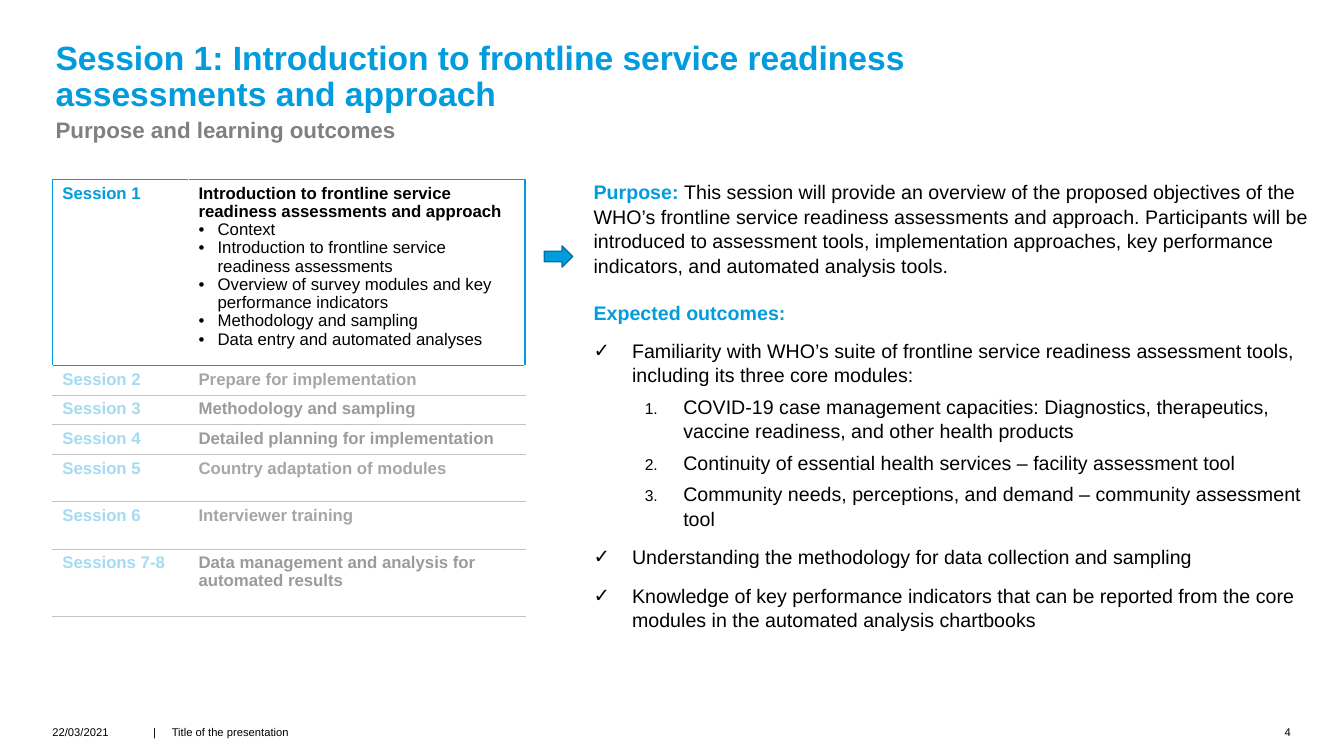
from dataclasses import dataclass
from typing import Optional

from lxml.etree import Element, SubElement
from pptx import Presentation
from pptx.dml.color import RGBColor
from pptx.enum.shapes import MSO_SHAPE
from pptx.enum.text import MSO_ANCHOR, PP_ALIGN
from pptx.oxml.ns import qn
from pptx.slide import Slide
from pptx.table import _Cell
from pptx.text.text import TextFrame
from pptx.util import Cm, Pt

BLUE = RGBColor(0x00, 0x9C, 0xDE)
NAVY = RGBColor(0x00, 0x73, 0xA4)
PALE = RGBColor(0xA4, 0xDB, 0xF3)
BLACK = RGBColor(0x00, 0x00, 0x00)
WHITE = RGBColor(0xFF, 0xFF, 0xFF)
SLATE = RGBColor(0x80, 0x80, 0x80)
DIM = RGBColor(0x9B, 0x9B, 0x9B)
MIST = RGBColor(0xA6, 0xA6, 0xA6)
RULE = RGBColor(0xC3, 0xC3, 0xC3)


@dataclass(frozen=True)
class Mark:
    sign: str
    left: float
    hang: float
    scale: int = 100


@dataclass(frozen=True)
class Row:
    name: str
    topic: str
    height: float
    tint: RGBColor
    hue: RGBColor = PALE
    points: tuple[str, ...] = ()


@dataclass(frozen=True)
class Line:
    text: str
    mark: Optional[Mark] = None
    before: float = 10
    after: float = 0
    lead: str = ""
    bold: bool = False
    color: RGBColor = BLACK


@dataclass(frozen=True)
class Label:
    text: str
    box: tuple[float, float, float, float]
    size: float
    color: RGBColor = BLACK
    bold: bool = False
    inset: tuple[float, float] = (0, 0)
    anchor: MSO_ANCHOR = MSO_ANCHOR.TOP
    align: PP_ALIGN = PP_ALIGN.LEFT
    space: float = 1
    tab: float = 0


DOT = Mark("•", 0.48, 0.48)
TICK = Mark("✓", 0.97, 0.97)
COUNT = Mark("", 2.26, 0.97, 80)

ROWS = (
    Row("Session 1", "Introduction to frontline service readiness assessments and approach",
        4.52, BLACK, BLUE,
        ("Context",
         "Introduction to frontline service readiness assessments",
         "Overview of survey modules and key performance indicators",
         "Methodology and sampling",
         "Data entry and automated analyses")),
    Row("Session 2", "Prepare for implementation", 0.74, MIST),
    Row("Session 3", "Methodology and sampling", 0.74, DIM),
    Row("Session 4", "Detailed planning for implementation", 0.74, DIM),
    Row("Session 5", "Country adaptation of modules", 1.19, MIST),
    Row("Session 6", "Interviewer training", 1.19, MIST),
    Row("Sessions 7-8", "Data management and analysis for automated results", 1.7, DIM),
)

LINES = (
    Line("This session will provide an overview of the proposed objectives of the WHO’s "
         "frontline service readiness assessments and approach. Participants will be "
         "introduced to assessment tools, implementation approaches, key performance "
         "indicators, and automated analysis tools.", before=0, after=6, lead="Purpose: "),
    Line("Expected outcomes:", bold=True, color=BLUE),
    Line("Familiarity with WHO’s suite of frontline service readiness assessment tools, "
         "including its three core modules:", TICK),
    Line("COVID-19 case management capacities: Diagnostics, therapeutics, vaccine "
         "readiness, and other health products", COUNT, 5),
    Line("Continuity of essential health services – facility assessment tool", COUNT, 5),
    Line("Community needs, perceptions, and demand – community assessment tool", COUNT, 5),
    Line("Understanding the methodology for data collection and sampling", TICK),
    Line("Knowledge of key performance indicators that can be reported from the core "
         "modules in the automated analysis chartbooks", TICK),
)

LABELS = (
    Label("Session 1: Introduction to frontline service readiness assessments and approach",
          (1.35, 0.91, 22.66, 1.96), 24, BLUE, True, (0.05, 0.99),
          MSO_ANCHOR.BOTTOM, space=0.9),
    Label("Purpose and learning outcomes", (1.35, 2.92, 22.66, 0.61), 16, SLATE, True,
          (0.05, 0.05), MSO_ANCHOR.MIDDLE, space=1.1),
    Label("22/03/2021", (1.32, 18.29, 2.18, 0.51), 8),
    Label("|\tTitle of the presentation", (3.86, 18.29, 8.26, 0.51), 8, tab=0.47),
    Label("4", (31.72, 18.29, 0.81, 0.51), 8, align=PP_ALIGN.RIGHT),
)


def write(frame: TextFrame, text: str, *, size: float, color: RGBColor = BLACK,
          bold: bool = False, lead: str = "", mark: Optional[Mark] = None,
          before: float = 0, after: float = 0, space: float = 1,
          align: PP_ALIGN = PP_ALIGN.LEFT, tab: float = 0) -> None:
    para = frame.paragraphs[0]
    if para.runs:
        para = frame.add_paragraph()
    props = para._p.get_or_add_pPr()
    if mark:
        props.set("marL", str(Cm(mark.left)))
        props.set("indent", str(-Cm(mark.hang)))
        tint = SubElement(props, qn("a:buClr"))
        SubElement(tint, qn("a:srgbClr"), val=str(BLACK))
        SubElement(props, qn("a:buSzPct"), val=str(mark.scale * 1000))
        SubElement(props, qn("a:buFont"), typeface="Arial")
        if mark.sign:
            SubElement(props, qn("a:buChar"), char=mark.sign)
        else:
            SubElement(props, qn("a:buAutoNum"), type="arabicPeriod")
    if tab:
        stops = SubElement(props, qn("a:tabLst"))
        SubElement(stops, qn("a:tab"), pos=str(Cm(tab)), algn="l")
    para.alignment = align
    para.line_spacing = space
    para.space_before = Pt(before)
    para.space_after = Pt(after)
    for part, hue, heavy in ((lead, BLUE, True), (text, color, bold)):
        if part:
            run = para.add_run()
            run.text = part
            run.font.name = "Arial"
            run.font.size = Pt(size)
            run.font.bold = heavy
            run.font.color.rgb = hue


def add_frame(slide: Slide, box: tuple[float, float, float, float],
              inset: tuple[float, float], anchor: MSO_ANCHOR = MSO_ANCHOR.TOP) -> TextFrame:
    frame = slide.shapes.add_textbox(*map(Cm, box)).text_frame
    frame.word_wrap = True
    frame.vertical_anchor = anchor
    frame.margin_left, frame.margin_right = map(Cm, inset)
    frame.margin_top = frame.margin_bottom = 0
    return frame


def edge(cell: _Cell, sides: dict[str, RGBColor]) -> None:
    cell.fill.background()
    props = cell._tc.get_or_add_tcPr()
    for place, (side, color) in enumerate(sides.items()):
        width = Pt(0.75) if color == RULE else Pt(1)
        line = Element(qn(f"a:ln{side}"), w=str(width))
        fill = SubElement(line, qn("a:solidFill"))
        SubElement(fill, qn("a:srgbClr"), val=str(color))
        props.insert(place, line)


def add_plan(slide: Slide) -> None:
    high = sum(row.height for row in ROWS)
    table = slide.shapes.add_table(
        len(ROWS), 2, Cm(1.32), Cm(4.52), Cm(11.91), Cm(high)).table
    table.first_row = table.horz_banding = False
    table.columns[0].width, table.columns[1].width = Cm(3.43), Cm(8.48)
    for place, row in enumerate(ROWS):
        table.rows[place].height = Cm(row.height)
        name, topic = table.cell(place, 0), table.cell(place, 1)
        write(name.text_frame, row.name, size=12, color=row.hue, bold=True, space=0.97)
        write(topic.text_frame, row.topic, size=12, color=row.tint, bold=True, space=0.97)
        for point in row.points:
            write(topic.text_frame, point, size=12, mark=DOT, space=0.97)
        outer = WHITE if place else BLUE
        top = BLUE if place < 2 else RULE
        base = RULE if place else BLUE
        edge(name, {"L": outer, "R": WHITE, "T": top, "B": base})
        edge(topic, {"L": WHITE, "R": outer, "T": top, "B": base})


def main() -> None:
    deck = Presentation()
    deck.slide_width, deck.slide_height = Cm(33.87), Cm(19.05)
    slide = deck.slides.add_slide(deck.slide_layouts[6])

    for label in LABELS:
        frame = add_frame(slide, label.box, label.inset, label.anchor)
        write(frame, label.text, size=label.size, color=label.color, bold=label.bold,
              align=label.align, space=label.space, tab=label.tab)

    add_plan(slide)

    body = add_frame(slide, (14.91, 4.52, 18.19, 12.95), (0.05, 0.05))
    for line in LINES:
        write(body, line.text, size=14, color=line.color, bold=line.bold, lead=line.lead,
              mark=line.mark, before=line.before, after=line.after, space=1.04)

    arrow = slide.shapes.add_shape(
        MSO_SHAPE.RIGHT_ARROW, Cm(13.72), Cm(6.2), Cm(0.71), Cm(0.53))
    arrow.shadow.inherit = False
    arrow.fill.solid()
    arrow.fill.fore_color.rgb = BLUE
    arrow.line.color.rgb = NAVY
    arrow.line.width = Pt(1)

    deck.save("out.pptx")


if __name__ == "__main__":
    main()
